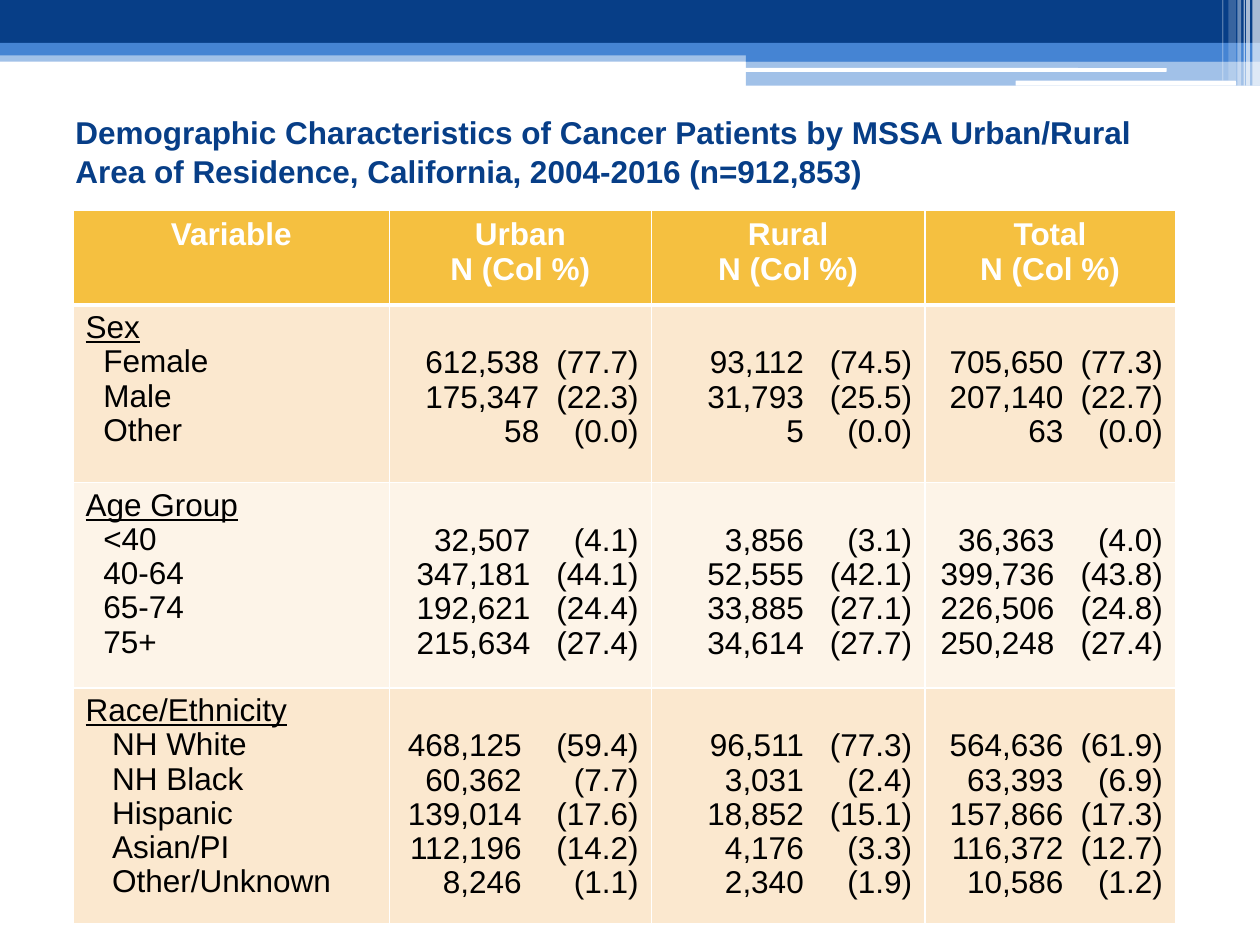
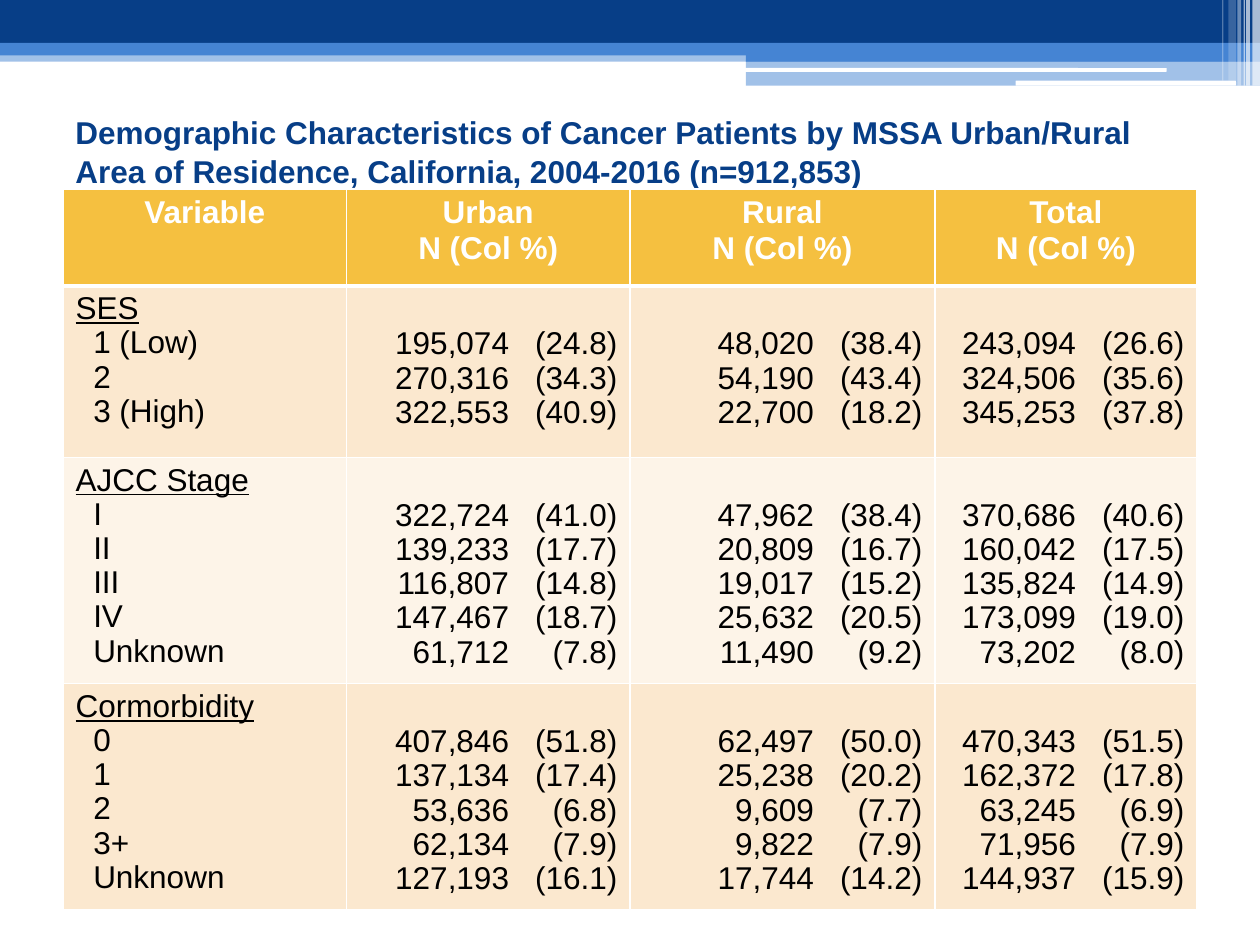
from dataclasses import dataclass

from lxml import etree
from pptx import Presentation
from pptx.dml.color import RGBColor
from pptx.enum.shapes import MSO_SHAPE
from pptx.enum.text import MSO_ANCHOR, PP_ALIGN
from pptx.oxml.ns import qn
from pptx.util import Inches, Pt

RECT, ROUNDED = MSO_SHAPE.RECTANGLE, MSO_SHAPE.ROUNDED_RECTANGLE
LEFT, CENTER = PP_ALIGN.LEFT, PP_ALIGN.CENTER
TOP = MSO_ANCHOR.TOP


@dataclass(frozen=True)
class Theme:
    navy: str = "073E87"
    blue: str = "4584D3"
    white: str = "FFFFFF"
    black: str = "000000"
    gold: str = "F5C040"
    stripes: tuple = ("FBE8CF", "FDF4E8")
    font: str = "Arial"
    size: int = 18
    title_spacing: float = 1.05
    row_spacing: float = 0.975
    thin: int = 1
    thick: int = 3


# Lengths are grid units: 100 columns by 75 rows on the slide
GRID_COLUMNS = 100
PAD_X, PAD_Y = 1, 0.5
LINE_HEIGHT = 2.8
SPACE = 0.7                      # one step of indent or of count spacing
PERCENT_WIDTH = 6.5

TITLE = ("Demographic Characteristics of Cancer Patients by MSSA Urban/Rural "
         "Area of Residence, California, 2004-2016 (n=912,853)")
HEADINGS = (("Variable",), ("Urban", "N (Col %)"),
            ("Rural", "N (Col %)"), ("Total", "N (Col %)"))

# Left, top, width, height, colour, opacity in percent
BANDS = (
    (0, 4, 100, 0.9, "blue", 50),
    (0, 0, 100, 3.4, "navy", 100),
    (0, 3.4, 100, 1, "blue", 100),
    (59.2, 3.9, 40.8, 1, "blue", 100),
    (59.2, 4.8, 40.8, 2, "blue", 50),
)
RULES = ((59.1, 5.4, 33.5, 0.3), (80.6, 6.4, 17.5, 0.4))
# Left, width, height, opacity of the upright strips in the corner
STRIPS = ((99.4, 0.6, 6.8, 65), (98.9, 0.3, 6.8, 65), (98.7, 0.1, 6.8, 60),
          (98.2, 0.3, 6.8, 40), (97.5, 0.6, 6.4, 20), (97, 0.1, 6.4, 30))

# Each group: name, indent steps, gap steps per column, and its rows
SEX = ("Sex", 2, (2, 3, 2), """
Female|612,538 (77.7)|93,112 (74.5)|705,650 (77.3)
Male|175,347 (22.3)|31,793 (25.5)|207,140 (22.7)
Other|58 (0.0)|5 (0.0)|63 (0.0)""")
AGE = ("Age Group", 2, (3, 3, 3), """
<40|32,507 (4.1)|3,856 (3.1)|36,363 (4.0)
40-64|347,181 (44.1)|52,555 (42.1)|399,736 (43.8)
65-74|192,621 (24.4)|33,885 (27.1)|226,506 (24.8)
75+|215,634 (27.4)|34,614 (27.7)|250,248 (27.4)""")
RACE = ("Race/Ethnicity", 3, (4, 3, 2), """
NH White|468,125 (59.4)|96,511 (77.3)|564,636 (61.9)
NH Black|60,362 (7.7)|3,031 (2.4)|63,393 (6.9)
Hispanic|139,014 (17.6)|18,852 (15.1)|157,866 (17.3)
Asian/PI|112,196 (14.2)|4,176 (3.3)|116,372 (12.7)
Other/Unknown|8,246 (1.1)|2,340 (1.9)|10,586 (1.2)""")
SES = ("SES", 2, (3, 3, 3), """
1 (Low)|195,074 (24.8)|48,020 (38.4)|243,094 (26.6)
2|270,316 (34.3)|54,190 (43.4)|324,506 (35.6)
3 (High)|322,553 (40.9)|22,700 (18.2)|345,253 (37.8)""")
STAGE = ("AJCC Stage", 2, (3, 3, 3), """
I|322,724 (41.0)|47,962 (38.4)|370,686 (40.6)
II|139,233 (17.7)|20,809 (16.7)|160,042 (17.5)
III|116,807 (14.8)|19,017 (15.2)|135,824 (14.9)
IV|147,467 (18.7)|25,632 (20.5)|173,099 (19.0)
Unknown|61,712 (7.8)|11,490 (9.2)|73,202 (8.0)""")
COMORBIDITY = ("Cormorbidity", 2, (3, 3, 3), """
0|407,846 (51.8)|62,497 (50.0)|470,343 (51.5)
1|137,134 (17.4)|25,238 (20.2)|162,372 (17.8)
2|53,636 (6.8)|9,609 (7.7)|63,245 (6.9)
3+|62,134 (7.9)|9,822 (7.9)|71,956 (7.9)
Unknown|127,193 (16.1)|17,744 (14.2)|144,937 (15.9)""")

# Table left and top, column widths, row heights, groups
SLIDES = (
    ((5.8, 16.7), (25.1, 20.8, 21.7, 19.9), (7.5, 14.1, 16.3, 18.7),
     (SEX, AGE, RACE)),
    ((5, 15), (22.5, 22.5, 24.2, 20.8), (7.7, 13.6, 17.8, 17.8),
     (SES, STAGE, COMORBIDITY)),
)


class Deck:
    def __init__(self, theme):
        self.theme = theme
        self.prs = Presentation()
        self.prs.slide_width, self.prs.slide_height = Inches(10), Inches(7.5)
        self.slide = None

    def units(self, *lengths):
        return [round(n * self.prs.slide_width / GRID_COLUMNS) for n in lengths]

    def new_slide(self):
        self.slide = self.prs.slides.add_slide(self.prs.slide_layouts[6])
        self.header()

    def block(self, box, color, opacity=100, preset=RECT):
        block = self.slide.shapes.add_shape(preset, *self.units(*box))
        block.shadow.inherit = False
        block.line.fill.background()
        block.fill.solid()
        block.fill.fore_color.rgb = RGBColor.from_string(color)
        if opacity < 100:
            tint = block.fill._xPr.find(qn("a:solidFill"))[0]
            etree.SubElement(tint, qn("a:alpha"), val=str(opacity * 1000))

    def header(self):
        for *box, color, opacity in BANDS:
            self.block(box, getattr(self.theme, color), opacity)
        for box in RULES:
            self.block(box, self.theme.white, preset=ROUNDED)
        for left, width, height, opacity in STRIPS:
            self.block((left, 0, width, height), self.theme.white, opacity)

    def style(self, paragraph, color, bold=False, underline=None, align=LEFT,
              spacing=None):
        paragraph.alignment = align
        if spacing:
            paragraph.line_spacing = spacing
        font = paragraph.font
        font.name, font.size = self.theme.font, Pt(self.theme.size)
        font.bold, font.underline = bold, underline
        font.color.rgb = RGBColor.from_string(color)

    def title(self, text):
        box = self.slide.shapes.add_textbox(*self.units(5, 8.3, 86.7, 7))
        frame = box.text_frame
        frame.word_wrap, frame.vertical_anchor = True, TOP
        frame.text = text
        self.style(frame.paragraphs[0], self.theme.navy, bold=True,
                   spacing=self.theme.title_spacing)

    def cell(self, cell, lines, fill, bottom, top_pad=PAD_Y, right_pad=PAD_X):
        """Fill and border a cell, and return its paragraphs."""
        cell.margin_left, cell.margin_right = self.units(PAD_X, right_pad)
        cell.margin_top, cell.margin_bottom = self.units(top_pad, 0)
        cell.vertical_anchor = TOP
        cell.fill.solid()
        cell.fill.fore_color.rgb = RGBColor.from_string(fill)
        thin = self.theme.thin
        sides = (("lnL", thin), ("lnR", thin), ("lnT", thin), ("lnB", bottom))
        for position, (side, width) in enumerate(sides):
            line = etree.Element(qn("a:" + side), w=str(Pt(width)))
            paint = etree.SubElement(line, qn("a:solidFill"))
            etree.SubElement(paint, qn("a:srgbClr"), val=self.theme.white)
            cell._tc.get_or_add_tcPr().insert(position, line)
        cell.text_frame.text = "\n".join(lines)
        return cell.text_frame.paragraphs

    def labels(self, cell, name, indent, labels, fill):
        paragraphs = self.cell(cell, [name, *labels], fill, self.theme.thin)
        for number, paragraph in enumerate(paragraphs):
            if number:
                margin, = self.units(indent * SPACE)
                paragraph._p.get_or_add_pPr().set("marL", str(margin))
            self.style(paragraph, self.theme.black, underline=number == 0,
                       spacing=self.theme.row_spacing)

    def counts(self, cell, values, width, gap, fill):
        lines = ["\t" + value.replace(" ", "\t") for value in values]
        percent_end = width - 2 * PAD_X
        stops = self.units(percent_end - PERCENT_WIDTH - gap * SPACE, percent_end)
        paragraphs = self.cell(cell, lines, fill, self.theme.thin,
                               PAD_Y + LINE_HEIGHT, PAD_X / 2)
        for paragraph in paragraphs:
            tabs = etree.SubElement(paragraph._p.get_or_add_pPr(), qn("a:tabLst"))
            for stop in stops:
                etree.SubElement(tabs, qn("a:tab"), pos=str(stop), algn="r")
            self.style(paragraph, self.theme.black,
                       spacing=self.theme.row_spacing)

    def table(self, corner, widths, heights, groups):
        box = self.units(*corner, sum(widths), sum(heights))
        table = self.slide.shapes.add_table(len(heights), len(widths), *box).table
        table.first_row = table.horz_banding = False
        for column, width in zip(table.columns, self.units(*widths)):
            column.width = width
        for row, height in zip(table.rows, self.units(*heights)):
            row.height = height

        # Heading row
        for column, lines in enumerate(HEADINGS):
            for paragraph in self.cell(table.cell(0, column), lines,
                                       self.theme.gold, self.theme.thick):
                self.style(paragraph, self.theme.white, bold=True, align=CENTER)

        # One row for each group of patients
        for row, (name, indent, gaps, data) in enumerate(groups, 1):
            fill = self.theme.stripes[(row - 1) % 2]
            labels, *series = zip(*(line.split("|")
                                    for line in data.strip().splitlines()))
            self.labels(table.cell(row, 0), name, indent, labels, fill)
            for column, (values, gap) in enumerate(zip(series, gaps), 1):
                self.counts(table.cell(row, column), values, widths[column],
                            gap, fill)


def main():
    deck = Deck(Theme())
    for layout in SLIDES:
        deck.new_slide()
        deck.title(TITLE)
        deck.table(*layout)
    deck.prs.save("out.pptx")


if __name__ == "__main__":
    main()
